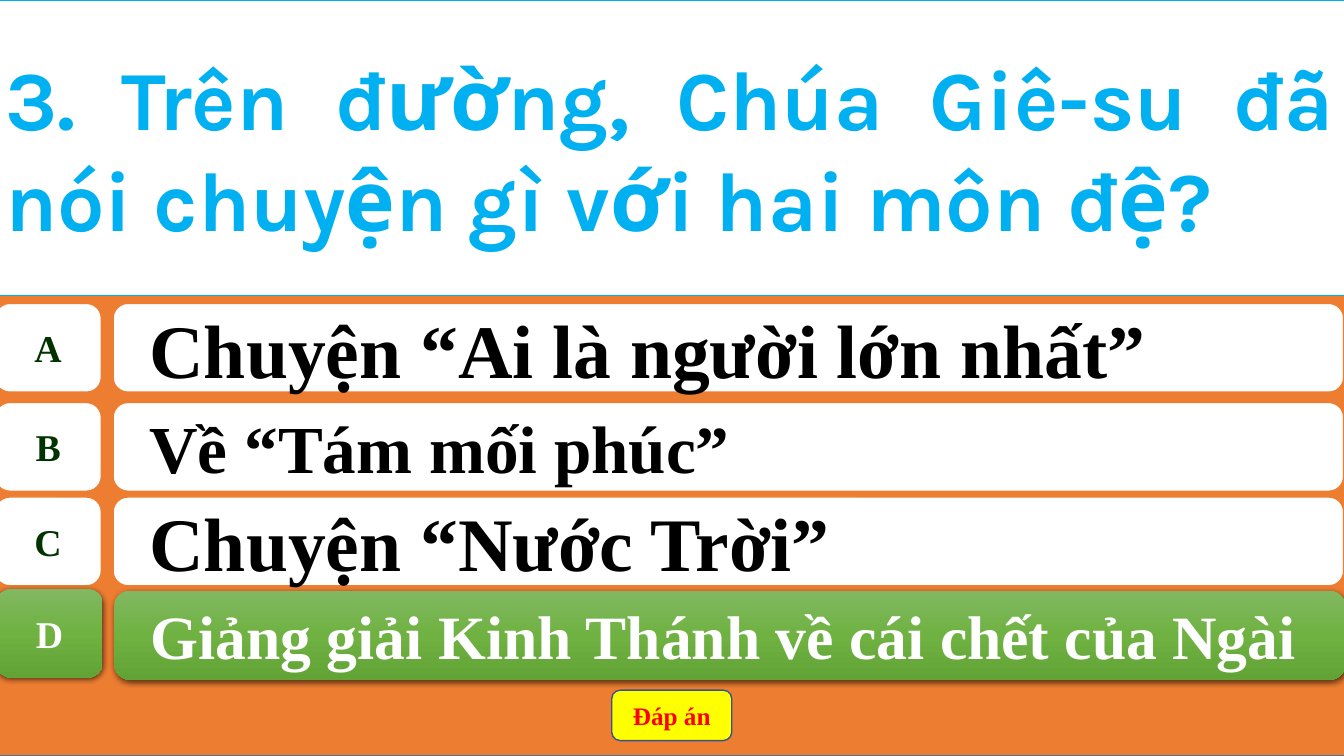
from lxml import etree
from pptx import Presentation
from pptx import util as u
from pptx.dml import color
from pptx.enum import shapes, text
from pptx.oxml import ns

COLORS = {"orange": "ED7D31", "border": "43739E", "white": "FFFFFF", "black": "000000",
          "letter": "003300", "sky": "00B0F0", "yellow": "FFFF00", "red": "FF0000",
          "button_line": "325491"}
GREEN_STOPS = [(0, "81B861"), (50, "6FB242"), (100, "62A336")]
SERIF = "Times New Roman"


def paint(shape, fill, line):
    """Flat fill and outline, or the raised green look when fill is None."""
    shape.shadow.inherit = False
    if fill:
        shape.fill.solid()
        shape.fill.fore_color.rgb = color.RGBColor.from_string(COLORS[fill])
        shape.line.color.rgb = color.RGBColor.from_string(COLORS[line])
        shape.line.width = u.Pt(1)
        return
    shape.line.fill.background()
    properties = shape.element.spPr
    gradient = etree.Element(ns.qn("a:gradFill"), rotWithShape="1")
    stops = etree.SubElement(gradient, ns.qn("a:gsLst"))
    for position, value in GREEN_STOPS:
        stop = etree.SubElement(stops, ns.qn("a:gs"), pos=str(position * 1000))
        etree.SubElement(stop, ns.qn("a:srgbClr"), val=value)
    etree.SubElement(gradient, ns.qn("a:lin"), ang="5400000", scaled="0")
    properties.find(ns.qn("a:prstGeom")).addnext(gradient)
    shadow = etree.SubElement(properties.find(ns.qn("a:effectLst")), ns.qn("a:outerShdw"),
                              blurRad=str(u.Pt(4.5)), dist=str(u.Pt(1.5)),
                              dir="5400000", algn="ctr", rotWithShape="0")
    black = etree.SubElement(shadow, ns.qn("a:srgbClr"), val=COLORS["black"])
    etree.SubElement(black, ns.qn("a:alpha"), val="63000")


def write(shape, words, size, ink, align, font=SERIF, wrap=True):
    frame = shape.text_frame
    frame.auto_size = text.MSO_AUTO_SIZE.NONE
    frame.word_wrap = wrap
    frame.vertical_anchor = text.MSO_ANCHOR.MIDDLE
    paragraph = frame.paragraphs[0]
    paragraph.alignment = align
    run = paragraph.add_run()
    run.text = words
    run.font.name, run.font.size, run.font.bold = font, u.Pt(size), True
    run.font.color.rgb = color.RGBColor.from_string(COLORS[ink])
    return paragraph


presentation = Presentation()
presentation.slide_width, presentation.slide_height = u.Pt(960), u.Pt(540)
slide = presentation.slides.add_slide(presentation.slide_layouts[5])
title = slide.shapes.title

# Orange backdrop, behind the title
backdrop = slide.shapes.add_shape(shapes.MSO_SHAPE.RECTANGLE,
                                  u.Pt(-3.6), u.Pt(0), u.Pt(964), u.Pt(540))
paint(backdrop, "orange", "border")
title.element.addprevious(backdrop.element)

# Question
title.left, title.top, title.width, title.height = u.Pt(-3.6), u.Pt(0), u.Pt(964), u.Pt(211)
paint(title, "white", "sky")
write(title, "3. Trên đường, Chúa Giê-su đã nói chuyện gì với hai môn đệ?",
      60, "sky", text.PP_ALIGN.JUSTIFY, font="Karla")

# Answers: letter, wording, size, left edge, letter top, wording top, correct
ANSWERS = [
    ("A", "Chuyện “Ai là người lớn nhất”", 54, -3.6, 216.7, 216.7, False),
    ("B", "Về “Tám mối phúc”", 48, -3.6, 287.5, 287.5, False),
    ("C", "Chuyện “Nước Trời”", 54, -3.6, 355, 355, False),
    ("D", "Giảng giải Kinh Thánh về cái chết của Ngài", 44, -2.6, 420.6, 422, True),
]
for letter, wording, size, left, letter_top, wording_top, correct in ANSWERS:
    group = slide.shapes.add_group_shape()
    badge = group.shapes.add_shape(shapes.MSO_SHAPE.FLOWCHART_ALTERNATE_PROCESS,
                                   u.Pt(left), u.Pt(letter_top), u.Pt(76), u.Pt(63.4))
    bar = group.shapes.add_shape(shapes.MSO_SHAPE.ROUNDED_RECTANGLE,
                                 u.Pt(left + 84.4), u.Pt(wording_top), u.Pt(879), u.Pt(63.4))
    for shape in (badge, bar):
        paint(shape, None if correct else "white", "orange")
    write(badge, letter, 27, "white" if correct else "letter",
          text.PP_ALIGN.CENTER, wrap=False)
    paragraph = write(bar, wording, size, "white" if correct else "black", text.PP_ALIGN.LEFT)
    paragraph.level = 1
    indents = paragraph._p.get_or_add_pPr()
    indents.set("marL", str(u.Pt(36)))
    indents.set("indent", str(u.Pt(-20.25)))

# Answer button
button = slide.shapes.add_shape(shapes.MSO_SHAPE.ROUNDED_RECTANGLE,
                                u.Pt(437), u.Pt(493), u.Pt(85.7), u.Pt(36))
paint(button, "yellow", "button_line")
write(button, "Đáp án", 18, "red", text.PP_ALIGN.CENTER)

presentation.save("out.pptx")
